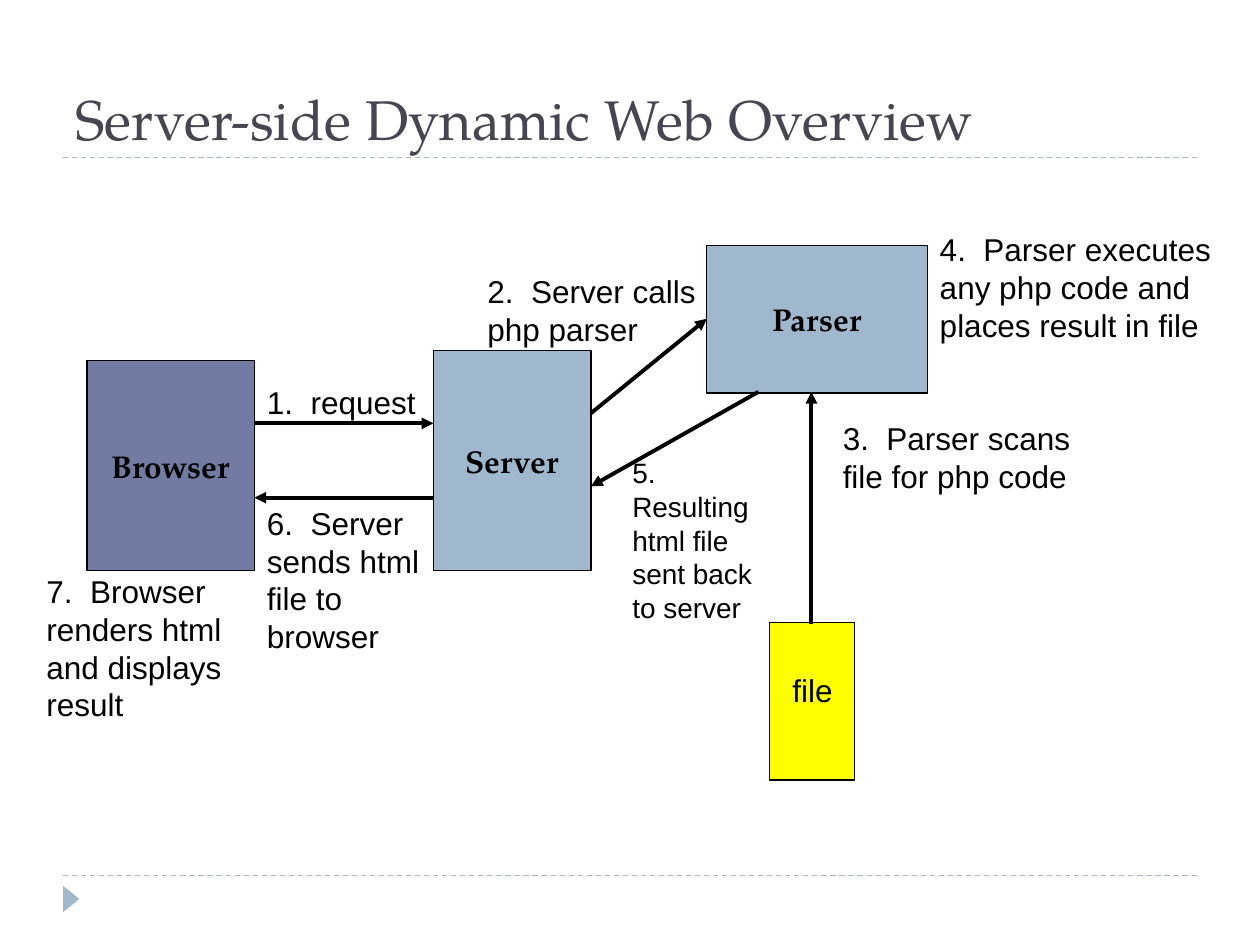
from dataclasses import dataclass

from lxml.etree import SubElement
from pptx import Presentation
from pptx.dml.color import RGBColor
from pptx.enum.dml import MSO_LINE
from pptx.enum.shapes import MSO_CONNECTOR, MSO_SHAPE
from pptx.enum.text import MSO_ANCHOR, PP_ALIGN
from pptx.oxml.ns import qn
from pptx.util import Inches, Pt


@dataclass(frozen=True)
class Theme:
    heading_font: str = "TeX Gyre Pagella"
    body_font: str = "Arial"
    title: RGBColor = RGBColor(0x46, 0x46, 0x53)
    ink: RGBColor = RGBColor(0, 0, 0)
    accent: RGBColor = RGBColor(0x9F, 0xB8, 0xCD)
    browser: RGBColor = RGBColor(0x72, 0x7C, 0xA3)
    file: RGBColor = RGBColor(0xFF, 0xFF, 0)
    title_size: int = 32
    text_size: int = 18
    small_size: int = 16
    thin: float = 0.75
    thick: float = 2.25


THEME = Theme()

NODES = [
    ("Browser", (0.69, 2.86, 1.33, 1.67), THEME.browser),
    ("Server", (3.44, 2.78, 1.25, 1.75), THEME.accent),
    ("Parser", (5.61, 1.95, 1.75, 1.17), THEME.accent),
    ("", (6.11, 4.94, 0.67, 1.25), THEME.file),
]

ARROWS = [
    (2.02, 3.36, 3.44, 3.36),
    (4.69, 3.28, 5.61, 2.53),
    (6.44, 4.95, 6.44, 3.11),
    (6.02, 3.11, 4.69, 3.86),
    (3.44, 3.95, 2.02, 3.95),
]

LABELS = [
    ("file", (6.19, 5.28, 0.52, 0.4), {"word_wrap": False}, THEME.text_size),
    ("1.  request", (2.02, 2.99, 1.38, 0.4), {"word_wrap": False}, THEME.text_size),
    ("2.  Server calls php parser", (3.77, 2.11, 2, 0.7), {}, THEME.text_size),
    ("3.  Parser scans file for php code", (6.59, 3.28, 2.35, 0.7), {}, THEME.text_size),
    ("4.  Parser executes any php code and places result in file",
     (7.36, 1.78, 2.68, 1), {}, THEME.text_size),
    ("5. Resulting html file sent back to server",
     (4.92, 3.57, 1.35, 1.44), {}, THEME.small_size),
    ("6.  Server sends html file to browser", (2.02, 3.95, 1.5, 1.3), {}, THEME.text_size),
    ("7.  Browser renders html and displays result",
     (0.27, 4.49, 1.83, 1.3), {}, THEME.text_size),
]


def apply_format(target, values):
    for name, value in values.items():
        setattr(target, name, value)


def write_text(shape, text, color, frame_format, font_format, alignment=PP_ALIGN.LEFT):
    frame = shape.text_frame
    apply_format(frame, {"word_wrap": True, **frame_format})
    para = frame.paragraphs[0]
    para.alignment = alignment
    span = para.add_run()
    span.text = text
    apply_format(span.font, font_format)
    span.font.color.rgb = color


def add_label(slide, text, area, frame_format, font_format, color=THEME.ink):
    box = slide.shapes.add_textbox(*map(Inches, area))
    write_text(box, text, color, frame_format, font_format)


def add_filled_shape(slide, kind, area, fill):
    shape = slide.shapes.add_shape(kind, *map(Inches, area))
    shape.shadow.inherit = False
    shape.fill.solid()
    shape.fill.fore_color.rgb = fill
    return shape


def add_node(slide, name, area, fill):
    box = add_filled_shape(slide, MSO_SHAPE.RECTANGLE, area, fill)
    box.line.color.rgb = THEME.ink
    box.line.width = Pt(THEME.thin)
    if name:
        write_text(
            box, name, THEME.ink,
            {"word_wrap": False, "vertical_anchor": MSO_ANCHOR.MIDDLE},
            {"name": THEME.heading_font, "size": Pt(THEME.text_size), "bold": True},
            PP_ALIGN.CENTER,
        )


def add_line(slide, ends, color, width):
    connector = slide.shapes.add_connector(MSO_CONNECTOR.STRAIGHT, *map(Inches, ends))
    connector.line.color.rgb = color
    connector.line.width = Pt(width)
    SubElement(connector.element.spPr, qn("a:effectLst"))
    return connector


def add_rule(slide, top):
    rule = add_line(slide, (0.5, top, 9.5, top), THEME.accent, THEME.thin)
    rule.line.dash_style = MSO_LINE.DASH


def add_arrow(slide, ends):
    arrow = add_line(slide, ends, THEME.ink, THEME.thick)
    SubElement(arrow.line._get_or_add_ln(), qn("a:tailEnd"), type="triangle")


def add_corner_marker(slide):
    marker = add_filled_shape(
        slide, MSO_SHAPE.ISOSCELES_TRIANGLE, (0.46, 7.07, 0.21, 0.13), THEME.accent)
    marker.rotation = 90
    marker.line.fill.background()


def main():
    deck = Presentation()
    apply_format(deck, {"slide_width": Inches(10), "slide_height": Inches(7.5)})
    page = deck.slides.add_slide(deck.slide_layouts[6])

    for top in (6.95, 1.25):
        add_rule(page, top)
    add_corner_marker(page)
    add_label(
        page, "Server-side Dynamic Web Overview", (0.5, 0.25, 9, 1),
        {"vertical_anchor": MSO_ANCHOR.BOTTOM},
        {"name": THEME.heading_font, "size": Pt(THEME.title_size)}, THEME.title,
    )
    for name, area, fill in NODES:
        add_node(page, name, area, fill)
    for ends in ARROWS:
        add_arrow(page, ends)
    for text, area, frame_format, size in LABELS:
        add_label(page, text, area, frame_format,
                  {"name": THEME.body_font, "size": Pt(size)})

    deck.save("out.pptx")


if __name__ == "__main__":
    main()
